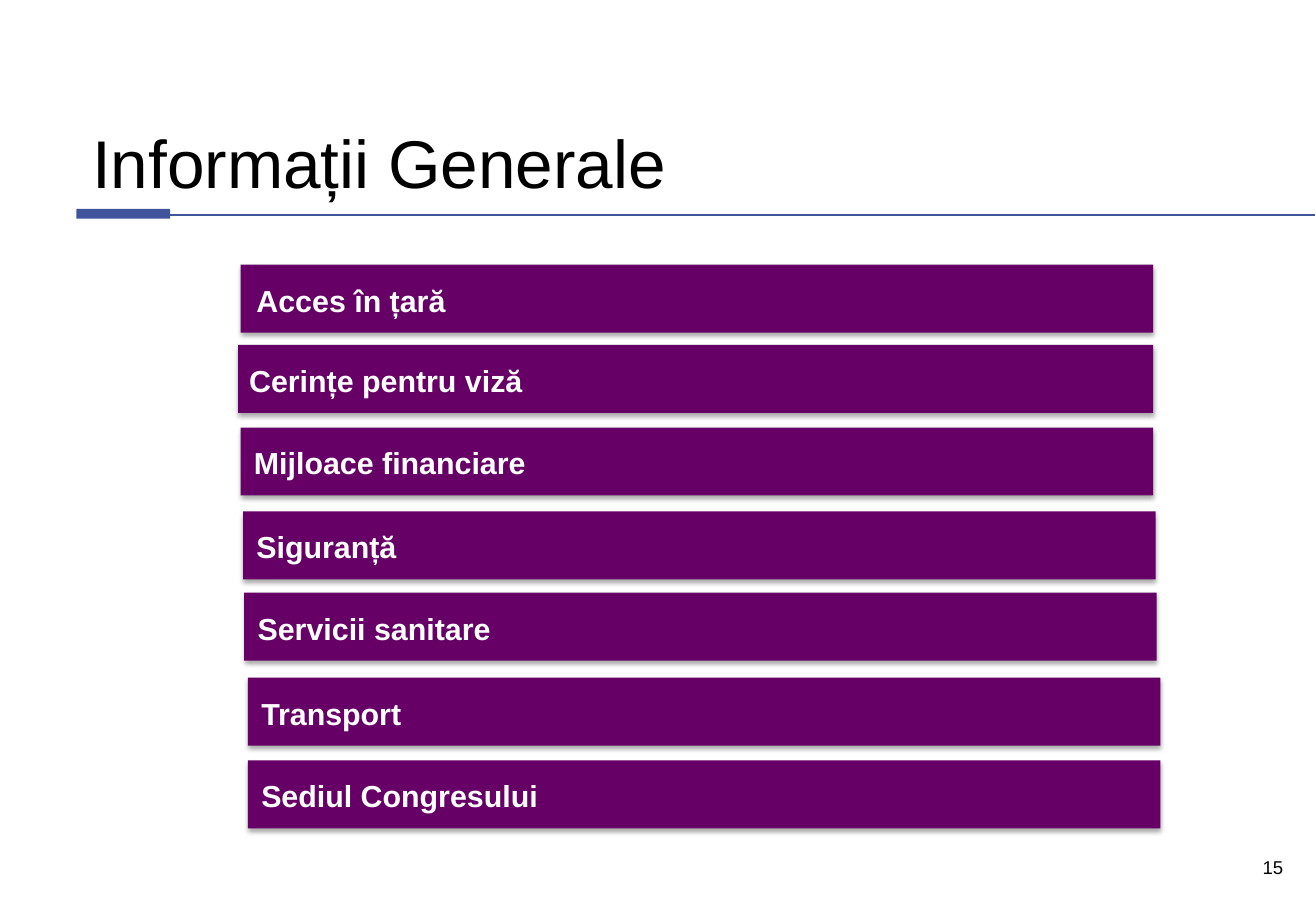
from lxml import etree
from pptx import Presentation
from pptx.dml.color import RGBColor
from pptx.enum.shapes import MSO_CONNECTOR, MSO_SHAPE
from pptx.enum.text import MSO_ANCHOR, PP_ALIGN
from pptx.oxml import parse_xml
from pptx.oxml.ns import nsdecls, qn
from pptx.util import Inches, Pt

BLUE, PURPLE = "40549B", "660066"
SHADOW = (
    f'<a:effectLst {nsdecls("a")}>'
    '<a:outerShdw blurRad="39370" dist="22860" dir="5400000" rotWithShape="0">'
    '<a:srgbClr val="000000"><a:alpha val="35000"/></a:srgbClr>'
    '</a:outerShdw></a:effectLst>'
)

presentation = Presentation()
presentation.slide_width = Inches(10.83)
presentation.slide_height = Inches(7.5)
slide = presentation.slides.add_slide(presentation.slide_layouts[6])


def add_bar(left, top, width, height, color):
    shape = slide.shapes.add_shape(
        MSO_SHAPE.RECTANGLE, Inches(left), Inches(top), Inches(width), Inches(height))
    shape.shadow.inherit = False
    shape.fill.solid()
    shape.fill.fore_color.rgb = RGBColor.from_string(color)
    shape.line.fill.background()
    return shape


def add_text(text, left, top, width, height, size, color="000000"):
    box = slide.shapes.add_textbox(
        Inches(left), Inches(top), Inches(width), Inches(height))
    frame = box.text_frame
    frame.word_wrap = True
    paragraph = frame.paragraphs[0]
    paragraph.text = text
    paragraph.font.name = "Arial"
    paragraph.font.size = Pt(size)
    paragraph.font.color.rgb = RGBColor.from_string(color)
    return frame, paragraph


# Title
title_frame, _ = add_text("Informații Generale", 0.66, 0.95, 6.08, 0.71, 40)
title_frame.vertical_anchor = MSO_ANCHOR.BOTTOM
title_frame.margin_bottom = 0

# Rule under the title
add_bar(0.63, 1.72, 0.77, 0.08, BLUE)
rule = slide.shapes.add_connector(
    MSO_CONNECTOR.STRAIGHT, Inches(0.9), Inches(1.77), Inches(10.82), Inches(1.77))
rule.line.color.rgb = RGBColor.from_string(BLUE)
rule.line.width = Pt(0.75)
etree.SubElement(rule._element.spPr, qn("a:effectLst"))

# Topic bars: text, bar left, top and width, label offset from the bar's left
topics = [
    ("Acces în țară", 1.98, 2.18, 7.51, 0.04),
    ("Cerințe pentru viză", 1.96, 2.84, 7.53, 0),
    ("Mijloace financiare", 1.98, 3.52, 7.51, 0.02),
    ("Siguranță", 2, 4.21, 7.51, 0.02),
    ("Servicii sanitare", 2.01, 4.88, 7.51, 0.02),
    ("Transport", 2.04, 5.58, 7.51, 0.02),
    ("Sediul Congresului", 2.04, 6.26, 7.51, 0.02),
]
for topic, left, top, width, offset in topics:
    bar = add_bar(left, top, width, 0.56, PURPLE)
    properties = bar._element.spPr
    properties.replace(properties.find(qn("a:effectLst")), parse_xml(SHADOW))
    label_frame, label = add_text(
        topic, left + offset, top + 0.04, 6.95, 0.42, 18, "FFFFFF")
    label_frame.margin_left = label_frame.margin_right = Inches(0.09)
    label_frame.margin_top = Inches(0.07)
    label_frame.margin_bottom = Inches(0.04)
    label.line_spacing = 1.1
    label.font.bold = True

# Slide number
_, number = add_text("15", 8.4, 7, 2.26, 0.42, 11)
number.alignment = PP_ALIGN.RIGHT

presentation.save("out.pptx")
